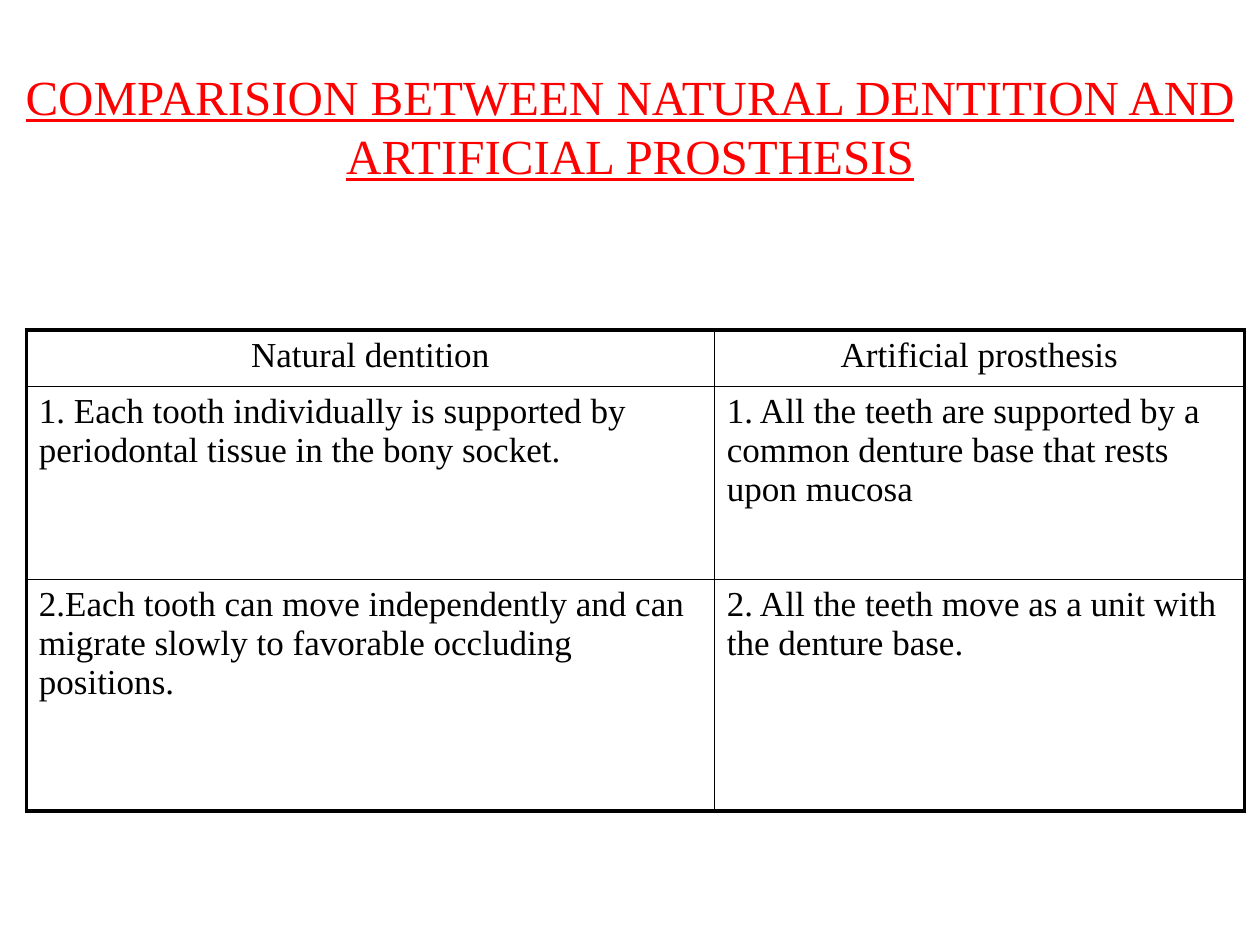
from lxml import etree
from pptx import Presentation
from pptx.dml.color import RGBColor
from pptx.enum.text import MSO_ANCHOR, PP_ALIGN
from pptx.oxml.ns import qn
from pptx.util import Cm, Pt

CENTER, LEFT = PP_ALIGN.CENTER, PP_ALIGN.LEFT
MIDDLE = MSO_ANCHOR.MIDDLE
FONT = "Times New Roman"
BLACK, RED = "000000", "FF0000"
THICK, THIN = Pt(2.25), Pt(1)


def add_run(para, text, size, color):
    run = para.add_run()
    run.text = text
    run.font.name = FONT
    run.font.size = Pt(size)
    run.font.color.rgb = RGBColor.from_string(color)
    return run


def add_edge(cell, side, width):
    """Draw one cell border; side is L, R, T or B, called in that order."""
    props = cell._tc.get_or_add_tcPr()
    line = etree.SubElement(props, qn(f"a:ln{side}"), w=str(width))
    fill = etree.SubElement(line, qn("a:solidFill"))
    etree.SubElement(fill, qn("a:srgbClr"), val=BLACK)


prs = Presentation()
prs.slide_width, prs.slide_height = Cm(25.4), Cm(19.05)
slide = prs.slides.add_slide(prs.slide_layouts[6])

# Table
rows = [
    ("Natural dentition", "Artificial prosthesis"),
    ("1. Each tooth individually is supported by periodontal tissue in the bony socket.",
     "1. All the teeth are supported by a common denture base that rests upon mucosa"),
    ("2.Each tooth can move independently and can migrate slowly to favorable occluding positions.",
     "2. All the teeth move as a unit with the denture base."),
]
widths = [13.87, 10.69]
heights = [1.14, 3.89, 4.67]
frame = slide.shapes.add_table(len(rows), len(widths), Cm(0.53), Cm(6.65),
                               Cm(sum(widths)), Cm(sum(heights)))
table = frame.table
table.first_row = table.horz_banding = False
for col, width in zip(table.columns, widths):
    col.width = Cm(width)
for row, height in zip(table.rows, heights):
    row.height = Cm(height)

for r, texts in enumerate(rows):
    for c, text in enumerate(texts):
        cell = table.cell(r, c)
        outer = {"L": c == 0, "R": c == len(widths) - 1,
                 "T": r == 0, "B": r == len(rows) - 1}
        for side, thick in outer.items():
            add_edge(cell, side, THICK if thick else THIN)
        cell.fill.background()
        para = cell.text_frame.paragraphs[0]
        para.alignment = CENTER if r == 0 else LEFT
        para.space_before = Pt(4)
        add_run(para, text, 20, BLACK)

# Title
title = slide.shapes.add_textbox(Cm(0), Cm(0.3), Cm(25.4), Cm(4.45))
body = title.text_frame
body.word_wrap = True
body.vertical_anchor = MIDDLE
para = body.paragraphs[0]
para.alignment = CENTER
run = add_run(para, "COMPARISION BETWEEN NATURAL DENTITION AND ARTIFICIAL PROSTHESIS", 28, RED)
run.font.underline = True

prs.save("out.pptx")
